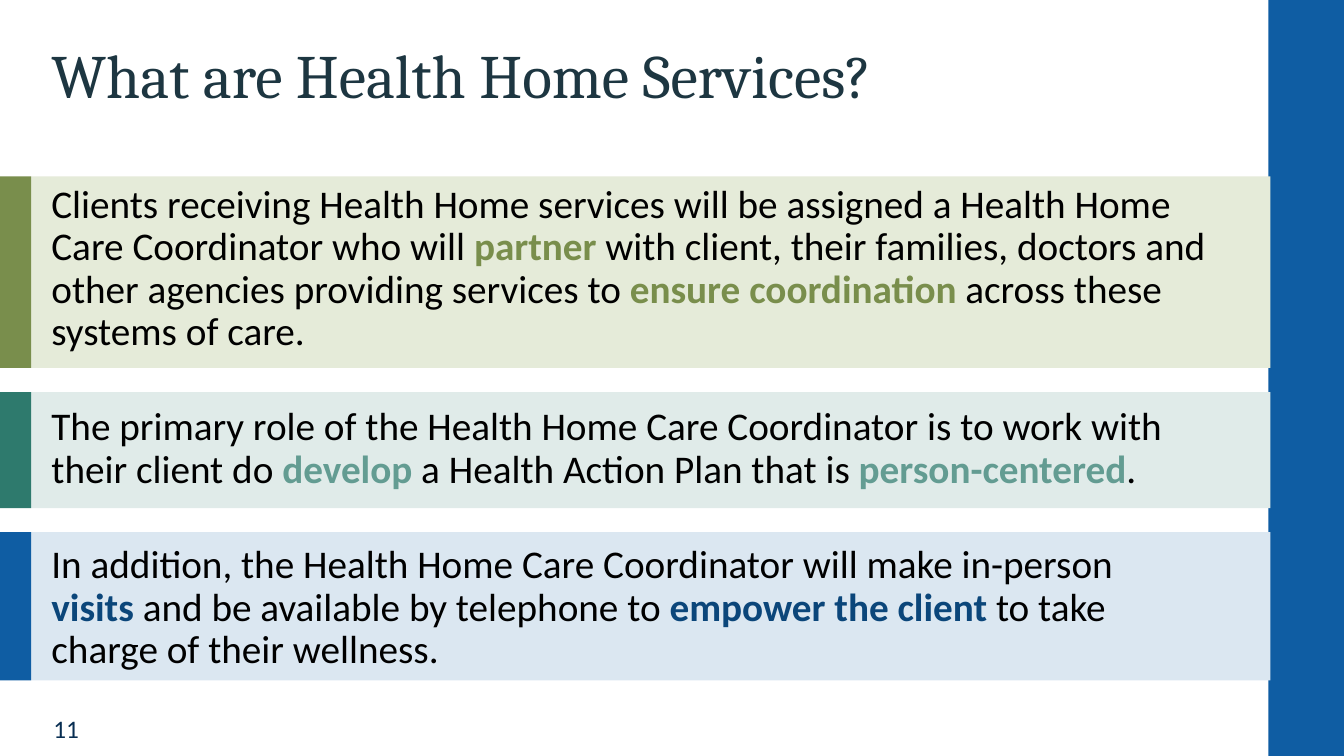
from lxml import etree
from pptx import Presentation
from pptx.dml.color import RGBColor
from pptx.enum.shapes import MSO_SHAPE
from pptx.enum.text import MSO_ANCHOR, MSO_AUTO_SIZE, PP_ALIGN
from pptx.oxml.ns import qn
from pptx.util import Pt

PX = 9144  # 100 px to the inch
RECTANGLE = MSO_SHAPE.RECTANGLE
TOP, MIDDLE = MSO_ANCHOR.TOP, MSO_ANCHOR.MIDDLE
LEFT = PP_ALIGN.LEFT
NO_AUTOFIT = MSO_AUTO_SIZE.NONE

BLACK = RGBColor(0x00, 0x00, 0x00)
SLATE = RGBColor(0x1D, 0x36, 0x41)
NAVY = RGBColor(0x08, 0x2E, 0x52)
BLUE = RGBColor(0x0F, 0x5D, 0xA3)
DARK_BLUE = RGBColor(0x0B, 0x46, 0x7A)
PALE_BLUE = RGBColor(0xDB, 0xE7, 0xF1)
OLIVE = RGBColor(0x79, 0x8E, 0x4C)
PALE_OLIVE = RGBColor(0xE5, 0xEB, 0xD9)
TEAL = RGBColor(0x2E, 0x7A, 0x6D)
SOFT_TEAL = RGBColor(0x63, 0x9C, 0x92)
PALE_TEAL = RGBColor(0xE0, 0xEB, 0xE9)

deck = Presentation()
deck.slide_width, deck.slide_height = 1333 * PX, 750 * PX
page = deck.slides.add_slide(deck.slide_layouts[1])


def add_block(left, top, width, height, color):
    block = page.shapes.add_shape(RECTANGLE, left * PX, top * PX, width * PX, height * PX)
    block.shadow.inherit = False
    block.fill.solid()
    block.fill.fore_color.rgb = color
    block.line.fill.background()


def add_span(para, text, *, size, color, font="Calibri", bold=False):
    span = para.add_run()
    span.text = text
    span.font.name = font
    span.font.size = Pt(size)
    span.font.bold = bold
    span.font.color.rgb = color


# Side bar and text bands
add_block(1258, 0, 75, 750, BLUE)
band_top, band_gap, tab_width = 175, 24, 31
for height, tab_color, band_color in [
    (190, OLIVE, PALE_OLIVE),
    (115, TEAL, PALE_TEAL),
    (147, BLUE, PALE_BLUE),
]:
    add_block(tab_width, band_top, 1229, height, band_color)
    add_block(0, band_top, tab_width, height, tab_color)
    band_top += height + band_gap

# Text frames
title, body = page.shapes.title, page.placeholders[1]
number = page.shapes.add_textbox(0, 0, PX, PX)
for box, left, top, width, height, anchor in [
    (title, 51, 45, 1150, 91, TOP),
    (body, 51, 183, 1150, 476, TOP),
    (number, 53, 701, 71, 43, MIDDLE),
]:
    box.left, box.top, box.width, box.height = left * PX, top * PX, width * PX, height * PX
    frame = box.text_frame
    frame.margin_left = frame.margin_top = frame.margin_right = frame.margin_bottom = 0
    frame.word_wrap = True
    frame.auto_size = NO_AUTOFIT
    frame.vertical_anchor = anchor
    page.shapes.element.append(box.element)  # bring the text in front of the bands

heading = title.text_frame.paragraphs[0]
heading.alignment = LEFT
heading.line_spacing = 0.9
add_span(heading, "What are Health Home Services?", size=44, color=SLATE, font="Cambria")
add_span(number.text_frame.paragraphs[0], "11", size=18, color=NAVY)

# Each statement alternates plain and highlighted text
statements = [
    (OLIVE, [
        "Clients receiving Health Home services will be assigned a Health Home "
        "Care Coordinator who will ",
        "partner ",
        "with client, their families, doctors and other agencies providing services to ",
        "ensure coordination ",
        "across these systems of care.",
    ]),
    (SOFT_TEAL, [
        "The primary role of the Health Home Care Coordinator is to work with their client do ",
        "develop",
        " a Health Action Plan that is ",
        "person-centered",
        ".",
    ]),
    (DARK_BLUE, [
        "In addition, the Health Home Care Coordinator will make in-person\n",
        "visits ",
        "and be available by telephone to ",
        "empower the client ",
        "to take charge of their wellness.",
    ]),
]
for row, (highlight, parts) in enumerate(statements):
    para = body.text_frame.add_paragraph() if row else body.text_frame.paragraphs[0]
    properties = para._p.get_or_add_pPr()
    properties.set("marL", "0")
    properties.set("indent", "0")
    etree.SubElement(properties, qn("a:buNone"))
    para.alignment = LEFT
    para.line_spacing = 0.9
    para.space_before = Pt(38 if row else 0)
    for index, part in enumerate(parts):
        marked = index % 2 == 1
        add_span(para, part.rstrip("\n"), size=28, color=highlight if marked else BLACK, bold=marked)
        if part.endswith("\n"):
            para.add_line_break()

deck.save("out.pptx")
